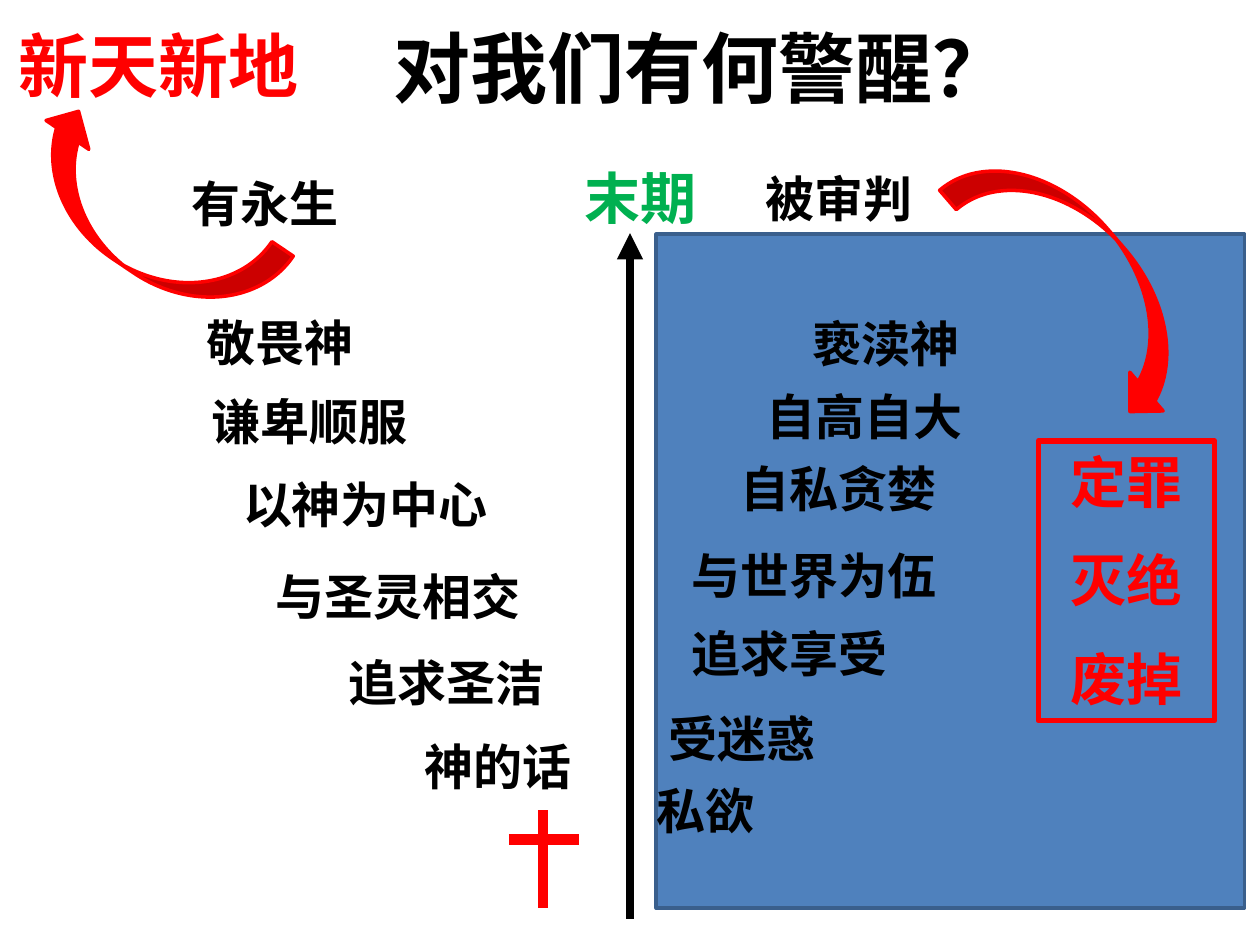
from lxml import etree
from pptx import Presentation
from pptx.dml.color import RGBColor
from pptx.enum.shapes import MSO_CONNECTOR, MSO_SHAPE
from pptx.enum.text import MSO_ANCHOR, MSO_AUTO_SIZE, PP_ALIGN
from pptx.oxml.ns import qn
from pptx.util import Cm, Pt

RECTANGLE = MSO_SHAPE.RECTANGLE
CURVED_ARROW = MSO_SHAPE.CURVED_LEFT_ARROW
STRAIGHT = MSO_CONNECTOR.STRAIGHT
CENTER = PP_ALIGN.CENTER
MIDDLE, TOP = MSO_ANCHOR.MIDDLE, MSO_ANCHOR.TOP
GROW = MSO_AUTO_SIZE.SHAPE_TO_FIT_TEXT
TITLE_ONLY = 5

BLACK, RED, GREEN = "000000", "FF0000", "00B050"
BLUE, DARK_BLUE = "4F81BD", "3A5F8C"
FONT, TITLE_FONT = "Calibri", "Noto Sans CJK SC"

# Text, left, top and width in centimetres, from the last days downwards
FAITHFUL_PATH = [
    ("有永生", 3.61, 3.38, 5.59),
    ("敬畏神", 3.91, 6.17, 5.59),
    ("谦卑顺服", 4.01, 7.77, 5.59),
    ("以神为中心", 4.65, 9.45, 5.59),
    ("与圣灵相交", 5.31, 11.3, 6.22),
    ("追求圣洁", 6.78, 13.03, 4.88),
    ("神的话", 8.31, 14.73, 3.86),
]
WORLDLY_PATH = [
    ("被审判", 15.19, 3.28, 5.59),
    ("亵渎神", 16.13, 6.2, 5.59),
    ("自高自大", 15.21, 7.67, 5.59),
    ("自私贪婪", 14.68, 9.12, 5.59),
    ("与世界为伍", 13.69, 10.87, 6.22),
    ("追求享受", 13.69, 12.45, 4.88),
    ("受迷惑", 13.23, 14.15, 4.24),
    ("私欲", 12.98, 15.6, 3.18),
]


def rgb(color):
    return RGBColor.from_string(color)


def write(text_frame, text, size, color, font=FONT, alignment=None, space_after=18):
    text_frame.word_wrap = True
    text_frame.text = text
    for paragraph in text_frame.paragraphs:
        paragraph.alignment = alignment
        paragraph.space_after = Pt(space_after)
        for run in paragraph.runs:
            run.font.name = font
            run.font.size = Pt(size)
            run.font.bold = True
            run.font.color.rgb = rgb(color)


def add_title(slide, text):
    title = slide.shapes.title
    title.left, title.top, title.width, title.height = Cm(0.74), Cm(0), Cm(22.86), Cm(2.67)
    # The wide left margin keeps the centred title clear of the red heading
    title.text_frame.margin_left = Cm(4.22)
    title.text_frame.vertical_anchor = MIDDLE
    write(title.text_frame, text, 44, BLACK, TITLE_FONT, CENTER, 0)


def add_label(slide, text, left, top, width, height=1.45, size=28, color=BLACK):
    label = slide.shapes.add_textbox(Cm(left), Cm(top), Cm(width), Cm(height))
    write(label.text_frame, text, size, color)
    label.text_frame.auto_size = GROW


def add_shape(slide, kind, left, top, width, height, line_color, line_width=2, fill=None):
    shape = slide.shapes.add_shape(kind, Cm(left), Cm(top), Cm(width), Cm(height))
    shape.shadow.inherit = False
    if fill:
        shape.fill.solid()
        shape.fill.fore_color.rgb = rgb(fill)
    else:
        shape.fill.background()
    shape.line.color.rgb = rgb(line_color)
    shape.line.width = Pt(line_width)
    return shape


def add_line(slide, start_x, start_y, end_x, end_y, color, width, arrow=False):
    line = slide.shapes.add_connector(
        STRAIGHT, Cm(start_x), Cm(start_y), Cm(end_x), Cm(end_y))
    line.line.color.rgb = rgb(color)
    line.line.width = Pt(width)
    if arrow:
        etree.SubElement(line.line._get_or_add_ln(), qn("a:tailEnd"), type="triangle")
    etree.SubElement(line._element.spPr, qn("a:effectLst"))


def add_curved_arrow(slide, left, top, width, height, rotation):
    arrow = add_shape(slide, CURVED_ARROW, left, top, width, height, RED, fill=RED)
    arrow.rotation = rotation


def add_verdict(slide, words):
    box = add_shape(slide, RECTANGLE, 20.93, 8.89, 3.56, 5.64, RED, 3)
    box.text_frame.vertical_anchor = TOP
    write(box.text_frame, "\n".join(words), 32, RED, alignment=CENTER)
    box.text_frame.auto_size = GROW


def add_cross(slide):
    add_line(slide, 10.95, 16.33, 10.95, 18.31, RED, 6)
    add_line(slide, 10.26, 16.92, 11.68, 16.92, RED, 6)


def main():
    presentation = Presentation()
    presentation.slide_width, presentation.slide_height = Cm(25.4), Cm(19.05)
    slide = presentation.slides.add_slide(presentation.slide_layouts[TITLE_ONLY])

    add_shape(slide, RECTANGLE, 13.23, 4.72, 11.86, 13.59, DARK_BLUE, fill=BLUE)
    add_line(slide, 12.7, 18.52, 12.7, 4.7, BLACK, 5, arrow=True)
    add_title(slide, "对我们有何警醒？")
    add_label(slide, "末期", 11.53, 3.18, 3.05, 1.63, 32, GREEN)
    add_cross(slide)
    for label in FAITHFUL_PATH + WORLDLY_PATH:
        add_label(slide, *label)
    add_curved_arrow(slide, 20.78, 2.39, 2.06, 6.4, 319.3)
    add_verdict(slide, ["定罪", "灭绝", "废掉"])
    add_curved_arrow(slide, 1.91, 1.55, 2.08, 5.74, 124)
    add_label(slide, "新天新地", 0.13, 0.33, 6.3, 1.96, 40, RED)

    presentation.save("out.pptx")


if __name__ == "__main__":
    main()
